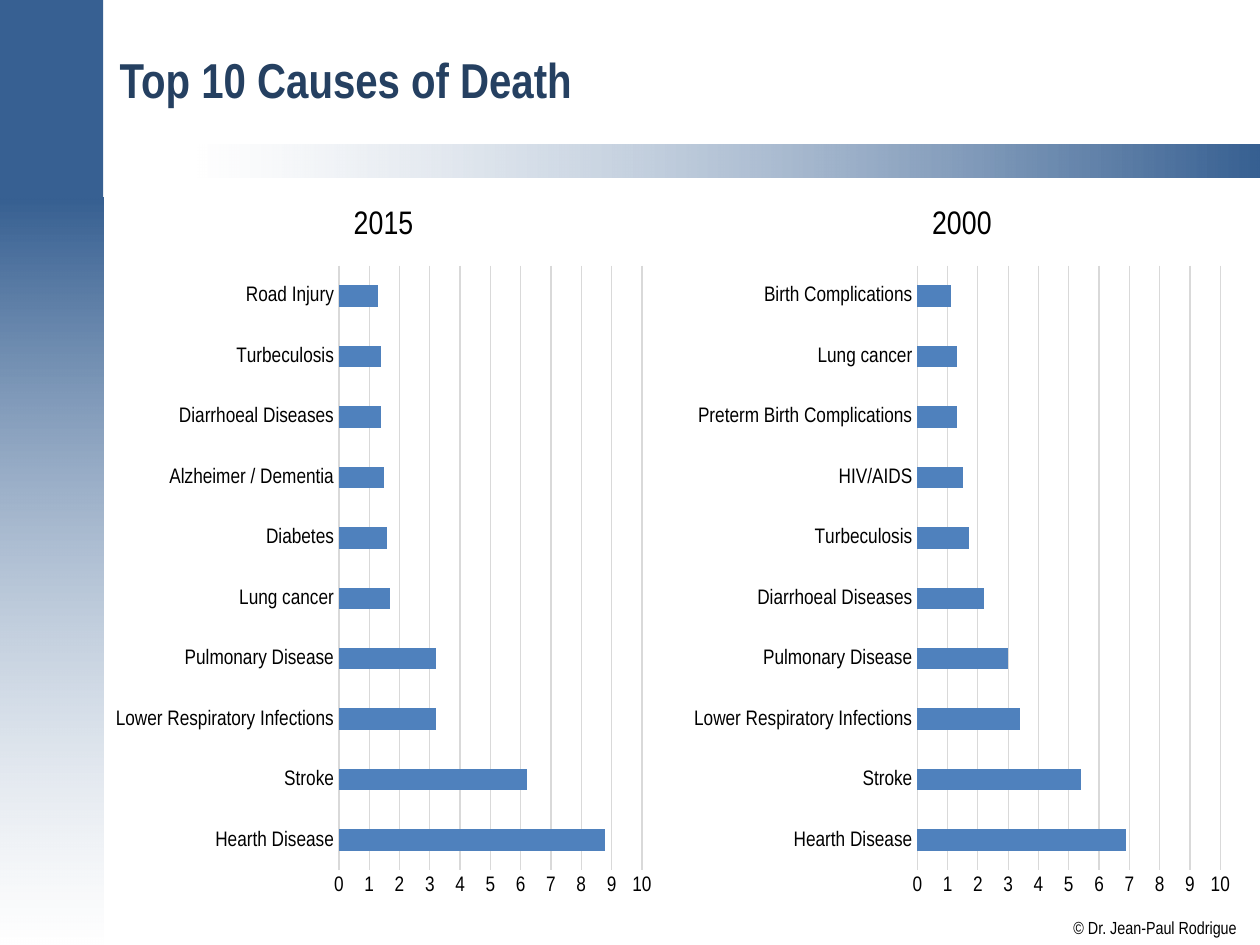
from lxml import etree
from pptx import Presentation
from pptx.chart.data import CategoryChartData
from pptx.dml.color import RGBColor
from pptx.enum.chart import XL_CHART_TYPE, XL_TICK_MARK
from pptx.enum.shapes import MSO_SHAPE
from pptx.enum.text import MSO_ANCHOR, MSO_AUTO_SIZE, PP_ALIGN
from pptx.oxml.ns import qn
from pptx.util import Inches, Pt

BAR_CLUSTERED = XL_CHART_TYPE.BAR_CLUSTERED
NO_TICK = XL_TICK_MARK.NONE
RECTANGLE = MSO_SHAPE.RECTANGLE
LEFT = PP_ALIGN.LEFT
MIDDLE = MSO_ANCHOR.MIDDLE
FIT_SHAPE = MSO_AUTO_SIZE.SHAPE_TO_FIT_TEXT

BAND_BLUE = RGBColor(0x37, 0x60, 0x92)
TITLE_BLUE = RGBColor(0x25, 0x40, 0x61)
BAR_BLUE = RGBColor(0x4F, 0x81, 0xBD)
GRID_GREY = RGBColor(0xD9, 0xD9, 0xD9)
BLACK = RGBColor(0, 0, 0)
WHITE = RGBColor(255, 255, 255)

CAUSES_2015 = {
    "Hearth Disease": 8.8,
    "Stroke": 6.2,
    "Lower Respiratory Infections": 3.2,
    "Pulmonary Disease": 3.2,
    "Lung cancer": 1.7,
    "Diabetes": 1.6,
    "Alzheimer / Dementia": 1.5,
    "Diarrhoeal Diseases": 1.4,
    "Turbeculosis": 1.4,
    "Road Injury": 1.3,
}
CAUSES_2000 = {
    "Hearth Disease": 6.9,
    "Stroke": 5.4,
    "Lower Respiratory Infections": 3.4,
    "Pulmonary Disease": 3.0,
    "Diarrhoeal Diseases": 2.2,
    "Turbeculosis": 1.7,
    "HIV/AIDS": 1.5,
    "Preterm Birth Complications": 1.3,
    "Lung cancer": 1.3,
    "Birth Complications": 1.1,
}


class SlideBuilder:
    font_name = "Arial Narrow"

    def __init__(self, slide):
        self.slide = slide

    def style(self, font, size, color=BLACK, bold=False):
        font.name = self.font_name
        font.size = Pt(size)
        font.bold = bold
        font.color.rgb = color

    def title(self, text, left, top, width, height):
        title = self.slide.shapes.title
        title.left, title.top = Inches(left), Inches(top)
        title.width, title.height = Inches(width), Inches(height)
        title.text_frame.text = text
        title.text_frame.vertical_anchor = MIDDLE
        heading = title.text_frame.paragraphs[0]
        heading.alignment = LEFT
        self.style(heading.font, 28, TITLE_BLUE, bold=True)

    def band(self, left, top, width, height):
        band = self.slide.shapes.add_shape(
            RECTANGLE, Inches(left), Inches(top), Inches(width), Inches(height))
        band.shadow.inherit = False
        band.fill.solid()
        band.fill.fore_color.rgb = BAND_BLUE
        band.line.fill.background()
        return band

    def fading_band(self, left, top, width, height, colors, angle):
        """Add a band whose white end is half transparent."""
        band = self.band(left, top, width, height)
        band.fill.gradient()
        band.fill.gradient_angle = angle
        for stop, color in zip(band.fill.gradient_stops, colors):
            stop.color.rgb = color
        for color in band._element.spPr.iter(qn("a:srgbClr")):
            if color.get("val") == str(WHITE):
                etree.SubElement(color, qn("a:alpha"), val="50000")

    def caption(self, text, left, top, width, height):
        box = self.slide.shapes.add_textbox(
            Inches(left), Inches(top), Inches(width), Inches(height))
        frame = box.text_frame
        frame.margin_left = frame.margin_right = 0
        frame.margin_top = frame.margin_bottom = 0
        frame.word_wrap = False
        frame.auto_size = FIT_SHAPE
        frame.text = text
        self.style(frame.paragraphs[0].font, 10)

    def bar_chart(self, year, causes, left, top, width, height):
        data = CategoryChartData()
        data.categories = list(causes)
        data.add_series(year, list(causes.values()))
        chart = self.slide.shapes.add_chart(
            BAR_CLUSTERED, Inches(left), Inches(top),
            Inches(width), Inches(height), data).chart
        self.style(chart.font, 10)
        chart.has_legend = False

        chart.has_title = True
        chart.chart_title.include_in_layout = False
        chart.chart_title.text_frame.text = year
        self.style(chart.chart_title.text_frame.paragraphs[0].font, 18.6)

        plot = chart.plots[0]
        plot.gap_width = 182
        plot.vary_by_categories = False
        bars = plot.series[0].format.fill
        bars.solid()
        bars.fore_color.rgb = BAR_BLUE

        causes_axis, share_axis = chart.category_axis, chart.value_axis
        for axis in (causes_axis, share_axis):
            axis.major_tick_mark = axis.minor_tick_mark = NO_TICK
            self.style(axis.tick_labels.font, 12)
        share_axis.minimum_scale, share_axis.maximum_scale = 0, 10
        share_axis.major_unit = 1
        share_axis.tick_labels.number_format = "General"
        share_axis.tick_labels.number_format_is_linked = False
        share_axis.format.line.fill.background()
        share_axis.has_major_gridlines = True
        for line in (causes_axis.format.line, share_axis.major_gridlines.format.line):
            line.color.rgb = GRID_GREY
            line.width = Pt(0.75)


def main():
    presentation = Presentation()
    presentation.slide_width = Inches(10)
    presentation.slide_height = Inches(7.5)
    title_only = presentation.slide_layouts[5]
    builder = SlideBuilder(presentation.slides.add_slide(title_only))

    builder.fading_band(-0.01, 1.57, 0.83, 5.93, (BAND_BLUE, WHITE), angle=270)
    builder.fading_band(1.57, 1.15, 8.43, 0.26, (WHITE, BAND_BLUE), angle=0)
    builder.band(-0.01, -0.01, 0.83, 1.58)
    builder.caption("© Dr. Jean-Paul Rodrigue", 8.52, 7.28, 1.3, 0.17)
    builder.title("Top 10 Causes of Death", 0.85, 0.11, 8.98, 1.04)
    builder.bar_chart("2015", CAUSES_2015, 0.83, 1.43, 4.43, 5.79)
    builder.bar_chart("2000", CAUSES_2000, 5.42, 1.43, 4.43, 5.79)

    presentation.save("out.pptx")


if __name__ == "__main__":
    main()
